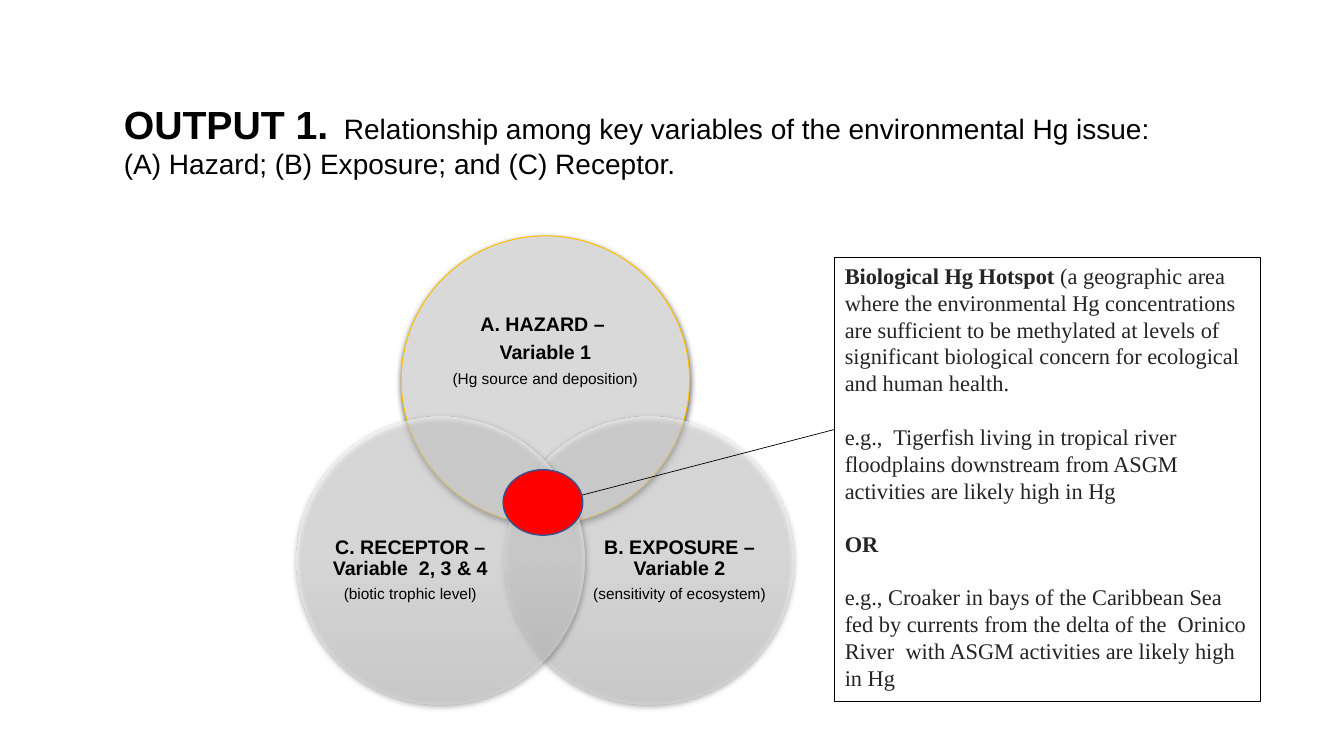
from dataclasses import dataclass

from lxml.etree import SubElement
from pptx import Presentation
from pptx.dml.color import RGBColor
from pptx.enum.shapes import MSO_CONNECTOR as LINE, MSO_SHAPE as SHAPE
from pptx.enum.text import MSO_ANCHOR as ANCHOR, PP_ALIGN as ALIGN
from pptx.oxml.ns import qn
from pptx.util import Emu, Pt

PX = 9144  # EMU per px, 100 px to the inch


@dataclass(frozen=True)
class Theme:
    sans: str = "Arial"
    serif: str = "Times New Roman"
    black: str = "000000"
    white: str = "FFFFFF"
    body: str = "242424"
    hazard: str = "D9D9D9"
    hazard_edge: str = "FFC000"
    glass_end: str = "E3E3E3"
    hotspot: str = "FF0000"
    hotspot_edge: str = "325491"
    title_size: int = 28
    subtitle_size: int = 20
    note_size: int = 16
    label_size: int = 14
    detail_size: int = 11
    note_gap: int = 19


class SlideBuilder:
    def __init__(self, deck, theme):
        self.theme = theme
        self.page = deck.slides.add_slide(deck.slide_layouts[6])

    def shape(self, kind, bounds, fill, edge=None, width=0.75):
        item = self.page.shapes.add_shape(kind, *(Emu(n * PX) for n in bounds))
        item.shadow.inherit = False
        if fill:
            item.fill.solid()
            item.fill.fore_color.rgb = RGBColor.from_string(fill)
        if edge:
            item.line.color.rgb = RGBColor.from_string(edge)
            item.line.width = Pt(width)
        else:
            item.line.fill.background()
        return item

    def soft_shadow(self, item):
        effects = item._element.spPr.find(qn("a:effectLst"))
        shadow = SubElement(effects, qn("a:outerShdw"), blurRad="57150",
                            dist="19050", dir="5400000", algn="ctr", rotWithShape="0")
        color = SubElement(shadow, qn("a:srgbClr"), val=self.theme.black)
        SubElement(color, qn("a:alpha"), val="63000")

    def circle(self, left, top, size, fill=None, edge=None):
        """Solid circle, or a half transparent one when no fill is given."""
        item = self.shape(SHAPE.OVAL, (left, top, size, size), fill, edge)
        if not fill:
            item.fill.gradient()
            item.fill.gradient_angle = 270
            stops = item.fill._fill._gradFill.find(qn("a:gsLst"))
            stops.clear()
            for place, value in ((0, self.theme.white), (50, self.theme.white),
                                 (100, self.theme.glass_end)):
                stop = SubElement(stops, qn("a:gs"), pos=str(place * 1000))
                color = SubElement(stop, qn("a:srgbClr"), val=value)
                SubElement(color, qn("a:alpha"), val="50000")
        self.soft_shadow(item)

    def text_box(self, bounds):
        box = self.page.shapes.add_textbox(*(Emu(n * PX) for n in bounds))
        box.text_frame.word_wrap = True
        return box.text_frame

    def paragraph(self, frame, first, spans, size, face, color, bold=None):
        para = frame.paragraphs[0] if first else frame.add_paragraph()
        para.font.size = Pt(size)
        para.font.name = face
        para.font.color.rgb = RGBColor.from_string(color)
        para.font.bold = bold
        for text, span_bold, span_size in spans:
            span = para.add_run()
            span.text = text
            if span_bold:
                span.font.bold = True
            if span_size:
                span.font.size = Pt(span_size)
        return para

    def circle_label(self, bounds, headings, detail):
        theme = self.theme
        frame = self.text_box(bounds)
        frame.vertical_anchor = ANCHOR.MIDDLE
        frame.margin_left = frame.margin_right = 0
        frame.margin_top = frame.margin_bottom = 0
        lines = [(text, theme.label_size, True) for text in headings]
        lines.append((detail, theme.detail_size, False))
        for index, (text, size, bold) in enumerate(lines):
            para = self.paragraph(frame, index == 0, [(text, None, None)],
                                  size, theme.sans, theme.black, bold)
            para.alignment = ALIGN.CENTER
            para.line_spacing = 0.9
            para.space_after = Pt(round(size * 0.35, 1))

    def note(self, bounds, paragraphs):
        theme = self.theme
        frame = self.shape(SHAPE.RECTANGLE, bounds, theme.white, theme.black).text_frame
        frame.word_wrap = True
        frame.vertical_anchor = ANCHOR.TOP
        for index, spans in enumerate(paragraphs):
            para = self.paragraph(frame, index == 0, spans, theme.note_size,
                                  theme.serif, theme.body)
            para.alignment = ALIGN.LEFT
            if index:
                para.space_before = Pt(theme.note_gap)

    def title(self, bounds, paragraphs):
        theme = self.theme
        frame = self.text_box(bounds)
        frame.margin_top = Emu(9 * PX)
        for index, spans in enumerate(paragraphs):
            self.paragraph(frame, index == 0, spans, theme.subtitle_size,
                           theme.sans, theme.black)

    def arrow(self, start, end):
        link = self.page.shapes.add_connector(
            LINE.STRAIGHT, *(Emu(n * PX) for n in start + end))
        link.line.color.rgb = RGBColor.from_string(self.theme.black)
        link.line.width = Pt(0.5)
        SubElement(link.line._get_or_add_ln(), qn("a:tailEnd"), type="triangle")
        SubElement(link._element.spPr, qn("a:effectLst"))


def main():
    deck = Presentation()
    deck.slide_width, deck.slide_height = Emu(1333 * PX), Emu(750 * PX)
    theme = Theme()
    slide = SlideBuilder(deck, theme)

    # Three overlapping circles with their labels
    size = 286
    slide.circle(398, 234, size, theme.hazard, theme.hazard_edge)
    slide.circle_label((436, 284, 210, 129), ["A. HAZARD – ", "Variable 1"],
                       "(Hg source and deposition)")
    slide.circle(501, 413, size)
    slide.circle_label((588, 487, 172, 157), ["B. EXPOSURE – Variable 2"],
                       "(sensitivity of ecosystem)")
    slide.circle(294, 413, size)
    slide.circle_label((321, 487, 172, 157), ["C. RECEPTOR – Variable  2, 3 & 4"],
                       "(biotic trophic level)")

    # Explanation of the hotspot
    slide.note((828, 255, 422, 441), [
        [("Biological Hg Hotspot", True, None),
         (" (a geographic area where the environmental Hg concentrations are "
          "sufficient to be methylated at levels of significant biological "
          "concern for ecological and human health.", None, None)],
        [("e.g.,  Tigerfish living in tropical river floodplains downstream "
          "from ASGM activities are likely high in Hg", None, None)],
        [("OR", True, None)],
        [("e.g., Croaker in bays of the Caribbean Sea fed by currents from the "
          "delta of the  Orinico River  with ASGM activities are likely high "
          "in Hg", None, None)],
    ])

    # Title
    slide.title((113, 90, 1161, 121), [
        [("OUTPUT 1.", True, theme.title_size), ("  ", True, None),
         ("Relationship among key variables of the environmental Hg issue:", None, None)],
        [("(A) Hazard; (B) Exposure; and (C) Receptor.", None, None)],
    ])

    # Arrow to the hotspot where the circles meet
    slide.arrow((828, 426), (551, 498))
    slide.shape(SHAPE.OVAL, (499, 466, 79, 65), theme.hotspot, theme.hotspot_edge, 1)

    deck.save("out.pptx")


if __name__ == "__main__":
    main()
